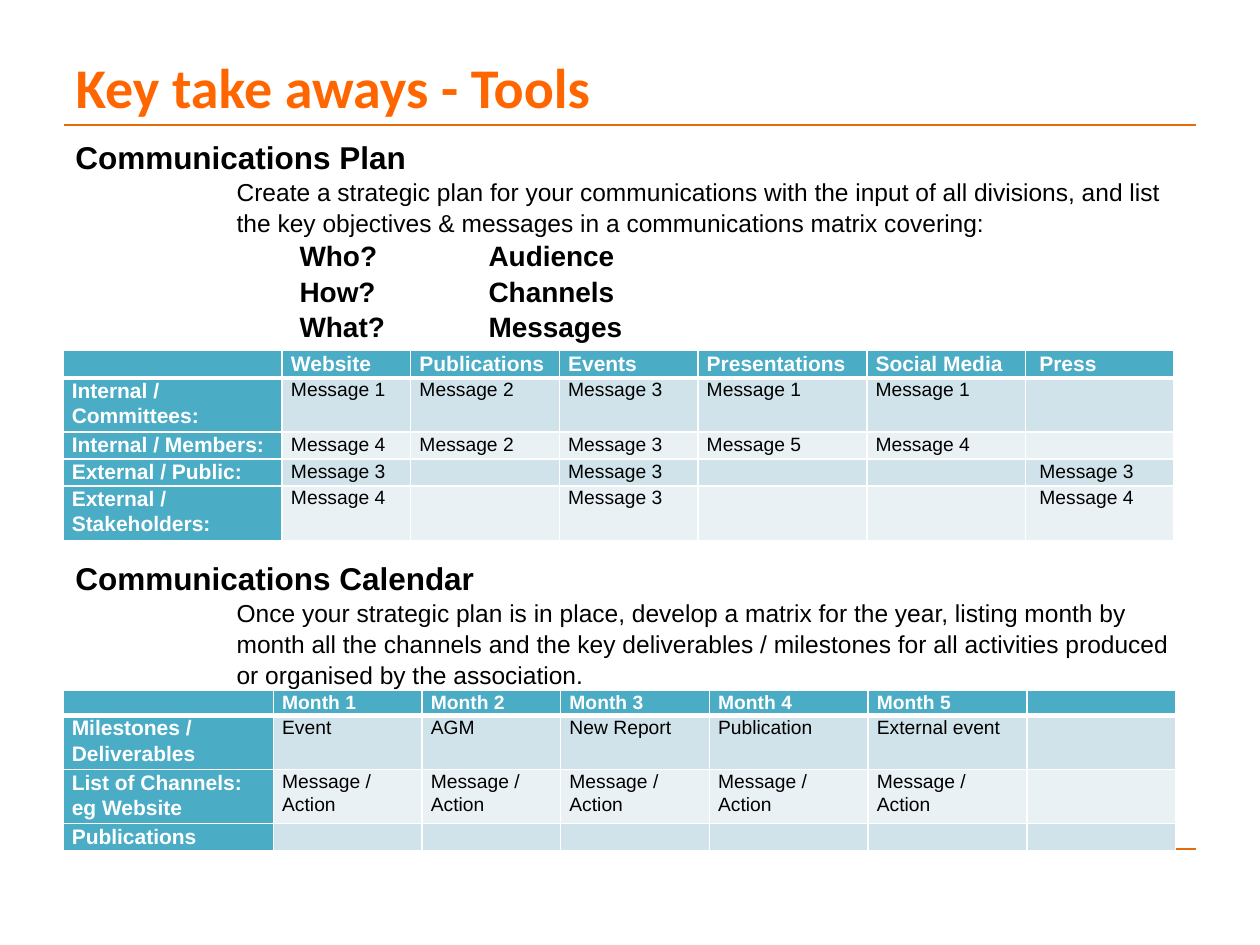
from dataclasses import dataclass

from lxml import etree
from pptx import Presentation
from pptx import util as u
from pptx.dml.color import RGBColor
from pptx.enum import shapes, text
from pptx.oxml.ns import qn


@dataclass(frozen=True)
class Theme:
    title_font: str = "Calibri"
    body_font: str = "Arial"
    title: str = "FF6600"
    rule: str = "E46C0A"
    ink: str = "000000"
    white: str = "FFFFFF"
    header: str = "4BACC6"
    bands: tuple = ("D0E3EA", "E9F1F5")
    title_size: int = 32
    heading_size: int = 18
    body_size: int = 14
    question_size: int = 16
    label_size: int = 12
    cell_size: int = 11


THEME = Theme()

QUESTIONS = [("Who?", "Audience"), ("How?", "Channels"), ("What?", "Messages")]

PLAN_WIDTHS = [1.74, 1.02, 1.18, 1.1, 1.34, 1.26, 1.18]
PLAN_HEIGHTS = [0.22, 0.43, 0.21, 0.21, 0.43]
PLAN_ROWS = [
    ["", "Website", "Publications", "Events", "Presentations", "Social Media", "Press"],
    ["Internal / Committees:", "Message 1", "Message 2", "Message 3", "Message 1", "Message 1", ""],
    ["Internal / Members:", "Message 4", "Message 2", "Message 3", "Message 5", "Message 4", ""],
    ["External / Public:", "Message 3", "", "Message 3", "", "", "Message 3"],
    ["External /\nStakeholders:", "Message 4", "", "Message 3", "", "", "Message 4"],
]

CALENDAR_WIDTHS = [1.67, 1.18, 1.1, 1.18, 1.26, 1.26, 1.18]
CALENDAR_HEIGHTS = [0.19, 0.43, 0.43, 0.21]
CALENDAR_ROWS = [
    ["", *[f"Month {number}" for number in range(1, 6)], ""],
    ["Milestones / Deliverables", "Event", "AGM", "New Report", "Publication", "External event", ""],
    ["List of Channels: eg Website", *["Message / Action"] * 5, ""],
    ["Publications", *[""] * 6],
]


def style_font(font, size, color=THEME.ink, bold=False, name=THEME.body_font):
    font.name = name
    font.size = u.Pt(size)
    font.bold = bold
    font.color.rgb = RGBColor.from_string(color)


def add_run(paragraph, words, size, **style):
    run = paragraph.add_run()
    run.text = words
    style_font(run.font, size, **style)


def add_title(slide, words, left, top, width, height):
    title = slide.shapes.title
    title.left, title.top, title.width, title.height = map(u.Inches, (left, top, width, height))
    frame = title.text_frame
    frame.vertical_anchor = text.MSO_ANCHOR.MIDDLE
    paragraph = frame.paragraphs[0]
    paragraph.alignment = text.PP_ALIGN.LEFT
    add_run(paragraph, words, THEME.title_size, color=THEME.title, bold=True,
            name=THEME.title_font)


def add_rule(slide, left, top, width):
    rule = slide.shapes.add_connector(
        shapes.MSO_CONNECTOR.STRAIGHT,
        u.Inches(left), u.Inches(top), u.Inches(left + width), u.Inches(top))
    rule.line.color.rgb = RGBColor.from_string(THEME.rule)
    rule.line.width = u.Pt(1.25)
    etree.SubElement(rule._element.spPr, qn("a:effectLst"))


def add_section(slide, heading, body, questions, left, top, width, height):
    """Place a heading, an indented paragraph and tabbed question pairs."""
    box = slide.shapes.add_textbox(*map(u.Inches, (left, top, width, height)))
    frame = box.text_frame
    frame.word_wrap = True
    lines = [(heading, THEME.heading_size, True), (body, THEME.body_size, False)]
    lines += [(f"\t{question}\t\t{answer}", THEME.question_size, True)
              for question, answer in questions]
    for index, (words, size, bold) in enumerate(lines):
        paragraph = frame.add_paragraph() if index else frame.paragraphs[0]
        paragraph.line_spacing = 1.05
        if index:
            properties = paragraph._p.get_or_add_pPr()
            properties.set("marL", str(u.Inches(1.28)))
            properties.set("indent", "0")
        add_run(paragraph, words, size, bold=bold)


def set_borders(cell, top, bottom):
    """Draw white cell borders; top and bottom are widths in points."""
    properties = cell._tc.get_or_add_tcPr()
    widths = {"a:lnL": 1, "a:lnR": 1, "a:lnT": top, "a:lnB": bottom}
    for index, (tag, points) in enumerate(widths.items()):
        line = etree.Element(qn(tag), w=str(u.Pt(points)))
        fill = etree.SubElement(line, qn("a:solidFill"))
        etree.SubElement(fill, qn("a:srgbClr"), val=THEME.white)
        properties.insert(index, line)


def fill_cell(cell, words, fill, size, color, bold, inset):
    cell.fill.solid()
    cell.fill.fore_color.rgb = RGBColor.from_string(fill)
    cell.margin_left, cell.margin_right = u.Inches(inset), u.Inches(0.07)
    cell.margin_top = cell.margin_bottom = 0
    for index, line in enumerate(words.split("\n")):
        frame = cell.text_frame
        paragraph = frame.add_paragraph() if index else frame.paragraphs[0]
        paragraph.line_spacing = 1.07
        if line:
            add_run(paragraph, line, size, color=color, bold=bold)
        else:
            style_font(paragraph.font, size)


def add_matrix(slide, rows, widths, heights, header_size, left, top, last_inset=0.07):
    """Place a table with a header row, a label column and banded cells."""
    frame = slide.shapes.add_table(
        len(rows), len(widths), u.Inches(left), u.Inches(top),
        u.Inches(sum(widths)), u.Inches(sum(heights)))
    table = frame.table
    for column, width in zip(table.columns, widths):
        column.width = u.Inches(width)
    for row, height in zip(table.rows, heights):
        row.height = u.Inches(height)
    for r, row in enumerate(rows):
        for c, words in enumerate(row):
            is_label = r == 0 or c == 0
            size = header_size if r == 0 else THEME.label_size if c == 0 else THEME.cell_size
            cell = table.cell(r, c)
            fill_cell(cell, words,
                      fill=THEME.header if is_label else THEME.bands[(r - 1) % 2],
                      size=size,
                      color=THEME.white if is_label else THEME.ink,
                      bold=is_label,
                      inset=last_inset if c == len(row) - 1 else 0.07)
            set_borders(cell, top=3 if r == 1 else 1, bottom=3 if r == 0 else 1)


def main():
    presentation = Presentation()
    presentation.slide_width, presentation.slide_height = u.Inches(10), u.Inches(7.5)
    slide = presentation.slides.add_slide(presentation.slide_layouts.get_by_name("Title Only"))

    for top in (6.74, 0.99):
        add_rule(slide, 0.51, top, 8.98)
    add_title(slide, "Key take aways - Tools", 0.5, 0.3, 9, 0.77)
    add_section(
        slide, "Communications Plan",
        "Create a strategic plan for your communications with the input of all divisions, "
        "and list the key objectives & messages in a communications matrix covering:",
        QUESTIONS, 0.5, 1.03, 9, 1.72)
    add_matrix(slide, PLAN_ROWS, PLAN_WIDTHS, PLAN_HEIGHTS, THEME.label_size,
               0.5, 2.78, last_inset=0.11)
    add_section(
        slide, "Communications Calendar",
        "Once your strategic plan is in place, develop a matrix for the year, listing month "
        "by month all the channels and the key deliverables / milestones for all activities "
        "produced or organised by the association.",
        [], 0.5, 4.37, 9, 1.11)
    add_matrix(slide, CALENDAR_ROWS, CALENDAR_WIDTHS, CALENDAR_HEIGHTS, THEME.cell_size,
               0.5, 5.48)
    presentation.save("out.pptx")


if __name__ == "__main__":
    main()
